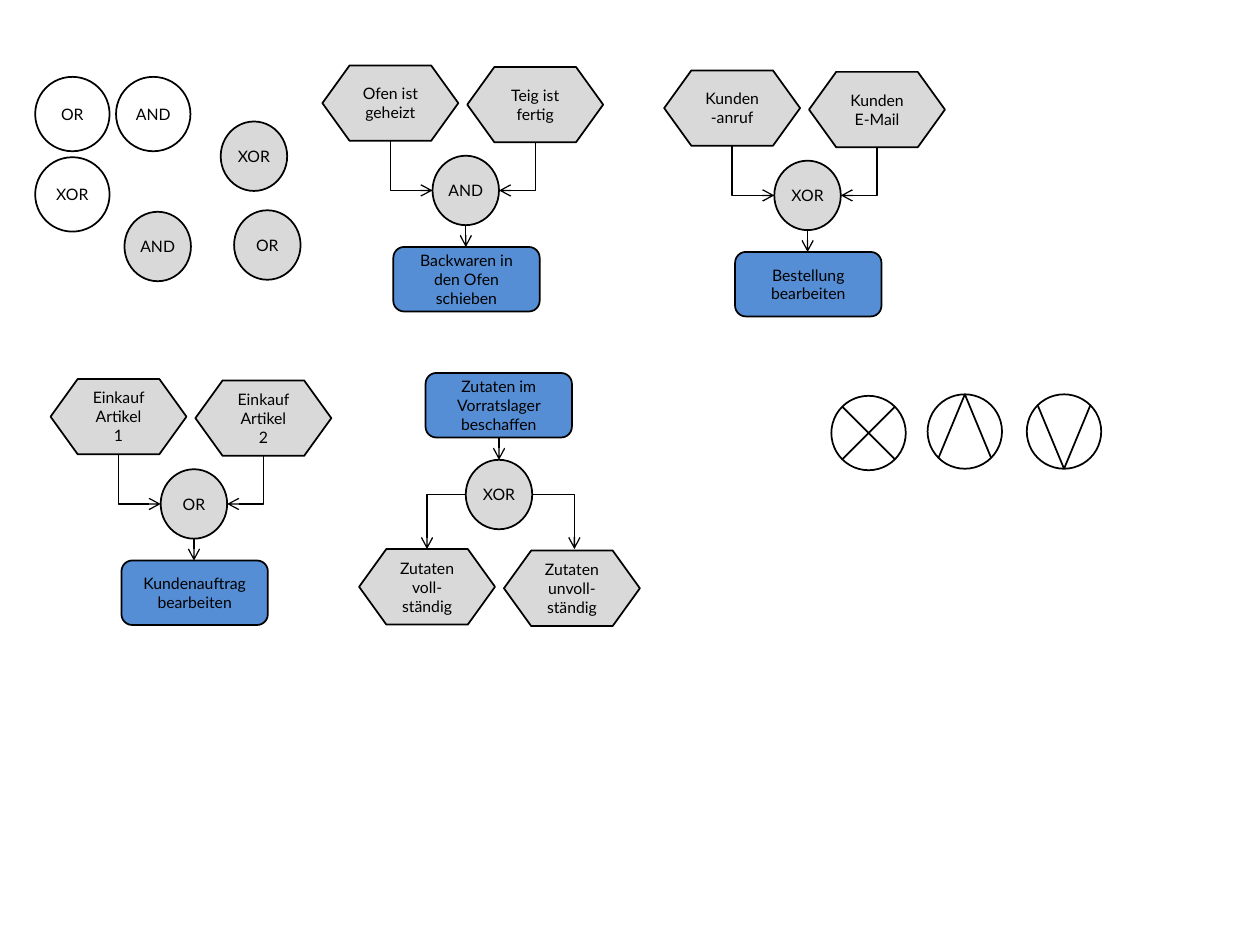
from pptx import Presentation
from pptx.dml.color import RGBColor
from pptx.enum.shapes import MSO_CONNECTOR, MSO_SHAPE
from pptx.enum.text import MSO_ANCHOR, PP_ALIGN
from pptx.oxml.ns import qn
from pptx.util import Cm, Pt
from lxml.etree import SubElement

BLACK, WHITE, GREY, BLUE = "000000", "FFFFFF", "D9D9D9", "558ED5"
EVENT_W, EVENT_H = 2.74, 1.52
GATE_W, GATE_H = 1.34, 1.4
TASK_W, TASK_H = 2.95, 1.3
RING = 1.5
NEAR, MID, FAR = 0.22, RING / 2, RING - 0.22


def color(value):
    return RGBColor.from_string(value)


def add_node(s, kind, x, y, w, h, fill, text="", wrap=True):
    sp = s.shapes.add_shape(kind, Cm(x), Cm(y), Cm(w), Cm(h))
    sp.shadow.inherit = False
    sp.fill.solid()
    sp.fill.fore_color.rgb = color(fill)
    sp.line.color.rgb = color(BLACK)
    sp.line.width = Pt(1)
    if text:
        tf = sp.text_frame
        tf.text = text
        tf.word_wrap = wrap
        tf.vertical_anchor = MSO_ANCHOR.MIDDLE
        p = tf.paragraphs[0]
        p.alignment = PP_ALIGN.CENTER
        p.space_after = Pt(10)
        font = p.runs[0].font
        font.name = "Lato"
        font.size = Pt(9)
        font.color.rgb = color(BLACK)


def add_event(s, x, y, text):
    add_node(s, MSO_SHAPE.FLOWCHART_PREPARATION, x, y, EVENT_W, EVENT_H, GREY, text)


def add_task(s, x, y, text):
    add_node(s, MSO_SHAPE.FLOWCHART_ALTERNATE_PROCESS, x, y, TASK_W, TASK_H, BLUE, text)


def add_gate(s, x, y, text):
    add_node(s, MSO_SHAPE.FLOWCHART_CONNECTOR, x, y, GATE_W, GATE_H, GREY, text, False)


def add_ring(s, x, y, text=""):
    add_node(s, MSO_SHAPE.FLOWCHART_CONNECTOR, x, y, RING, RING, WHITE, text, False)


def add_line(s, x1, y1, x2, y2, kind=MSO_CONNECTOR.STRAIGHT, width=0.75, arrow=True):
    c = s.shapes.add_connector(kind, Cm(x1), Cm(y1), Cm(x2), Cm(y2))
    c.line.color.rgb = color(BLACK)
    c.line.width = Pt(width)
    if arrow:
        SubElement(c.line._get_or_add_ln(), qn("a:tailEnd"), type="arrow")
    spPr = c._element.spPr
    SubElement(spPr, qn("a:effectLst"))
    if kind == MSO_CONNECTOR.ELBOW:
        spPr.find(qn("a:prstGeom")).set("prst", "bentConnector2")
    return c


def add_across_down(s, x1, y1, x2, y2):
    add_line(s, x1, y1, x2, y2, MSO_CONNECTOR.ELBOW)


def add_down_across(s, x1, y1, x2, y2):
    mx, my = (x1 + x2) / 2, (y1 + y2) / 2
    half_w, half_h = (y2 - y1) / 2, abs(x2 - x1) / 2
    side = 1 if x2 > x1 else -1
    c = add_line(s, mx + side * half_w, my - half_h, mx - side * half_w, my + half_h,
                 MSO_CONNECTOR.ELBOW)
    angle = 270 if x2 > x1 else 90
    c._element.spPr.find(qn("a:xfrm")).set("rot", str(angle * 60000))


def add_join(s, x, y, left, right, gate, task):
    right_x, right_y = x + 2.92, y + 0.03
    gate_x, gate_y = x + 2.22, y + 1.82
    task_y = y + 3.66
    gate_mx, gate_my = gate_x + GATE_W / 2, gate_y + GATE_H / 2
    add_event(s, x, y, left)
    add_event(s, right_x, right_y, right)
    add_gate(s, gate_x, gate_y, gate)
    add_task(s, x + 1.43, task_y, task)
    add_down_across(s, x + EVENT_W / 2, y + EVENT_H, gate_x, gate_my)
    add_down_across(s, right_x + EVENT_W / 2, right_y + EVENT_H, gate_x + GATE_W, gate_my)
    add_line(s, gate_mx, gate_y + GATE_H, gate_mx, task_y)


def add_split(s, x, y, task, gate, left, right):
    gate_x, gate_y = x + 0.81, y + 1.75
    left_x, right_x, event_y = x - 1.34, x + 1.58, y + 3.55
    gate_mx, gate_my = gate_x + GATE_W / 2, gate_y + GATE_H / 2
    add_task(s, x, y, task)
    add_gate(s, gate_x, gate_y, gate)
    add_event(s, left_x, event_y, left)
    add_event(s, right_x, event_y + 0.03, right)
    add_line(s, gate_mx, y + TASK_H, gate_mx, gate_y)
    add_across_down(s, gate_x, gate_my, left_x + EVENT_W / 2, event_y)
    add_across_down(s, gate_x + GATE_W, gate_my, right_x + EVENT_W / 2 + 0.05, event_y)


def add_symbol(s, x, y, strokes):
    add_ring(s, x, y)
    for x1, y1, x2, y2 in strokes:
        add_line(s, x + x1, y + y1, x + x2, y + y2, width=1, arrow=False)


def main():
    prs = Presentation()
    prs.slide_width, prs.slide_height = Cm(25.4), Cm(19.05)
    s = prs.slides.add_slide(prs.slide_layouts[6])

    for x, y, text in [(0.71, 3.17, "XOR"), (0.71, 1.55, "OR"), (2.34, 1.55, "AND")]:
        add_ring(s, x, y, text)
    for x, y, text in [(4.45, 2.45, "XOR"), (2.51, 4.27, "AND"), (4.72, 4.24, "OR")]:
        add_gate(s, x, y, text)

    add_join(s, 6.5, 1.32, "Ofen ist geheizt", "Teig ist fertig",
             "AND", "Backwaren in den Ofen schieben")
    add_join(s, 13.39, 1.42, "Kunden-anruf", "Kunden E-Mail",
             "XOR", "Bestellung bearbeiten")
    add_join(s, 1.02, 7.64, "Einkauf Artikel 1", "Einkauf Artikel 2",
             "OR", "Kundenauftrag bearbeiten")
    add_split(s, 8.58, 7.52, "Zutaten im Vorratslager beschaffen", "XOR",
              "Zutaten voll-ständig", "Zutaten unvoll-ständig")

    add_symbol(s, 16.76, 7.98, [(NEAR, NEAR, FAR, FAR), (NEAR, FAR, FAR, NEAR)])
    add_symbol(s, 18.7, 7.95, [(MID, 0, FAR, FAR), (NEAR, FAR, MID, 0)])
    add_symbol(s, 20.7, 7.95, [(FAR, NEAR, MID, RING), (MID, RING, NEAR, NEAR)])

    prs.save("out.pptx")


if __name__ == "__main__":
    main()
